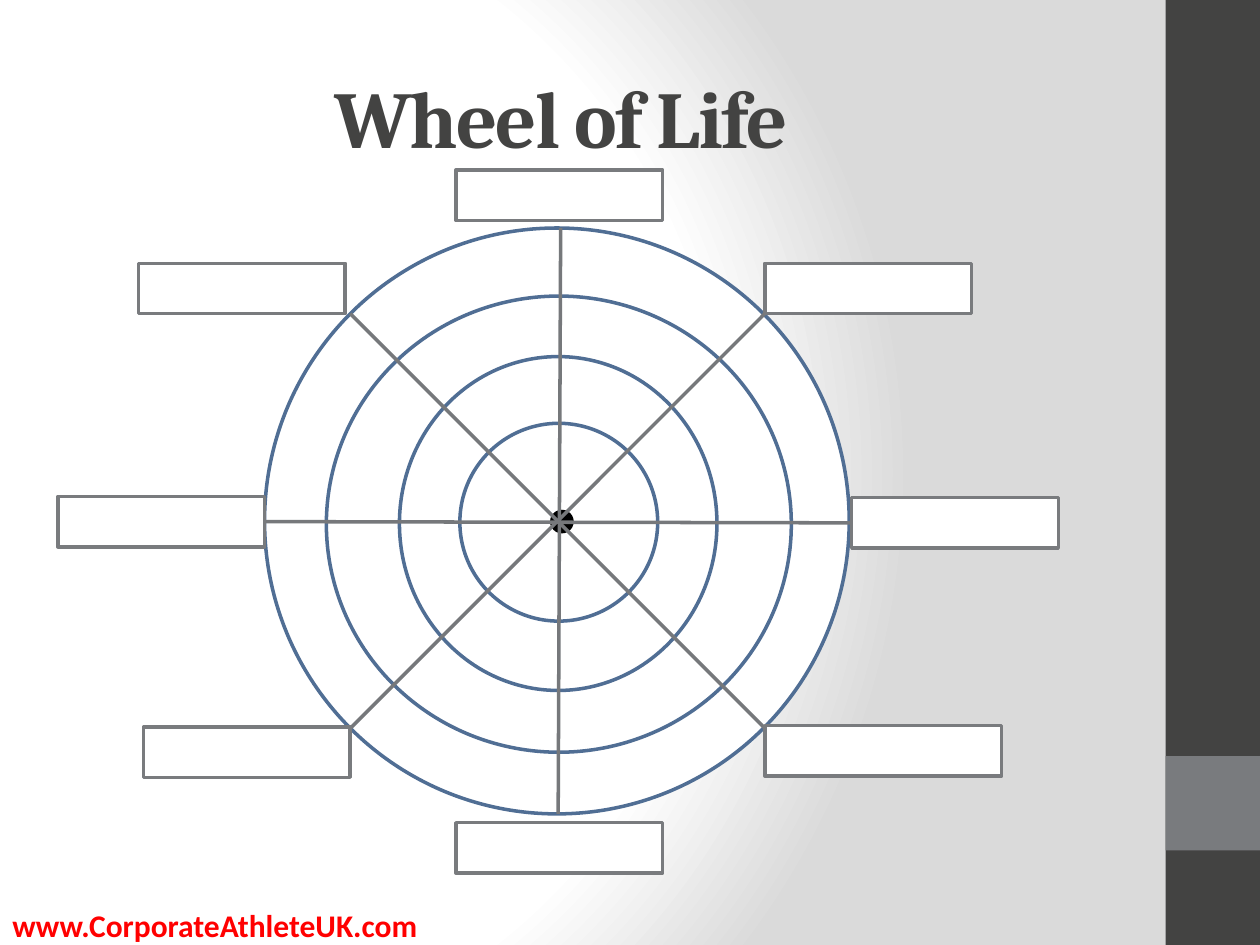
from dataclasses import dataclass

from lxml import etree
from pptx import Presentation
from pptx.dml.color import RGBColor
from pptx.enum.shapes import MSO_CONNECTOR, MSO_SHAPE
from pptx.enum.text import MSO_ANCHOR, PP_ALIGN
from pptx.oxml import parse_xml
from pptx.oxml.ns import nsdecls, qn
from pptx.util import Pt

RECTANGLE = MSO_SHAPE.RECTANGLE
OVAL = MSO_SHAPE.OVAL
STRAIGHT = MSO_CONNECTOR.STRAIGHT
LEFT, CENTER = PP_ALIGN.LEFT, PP_ALIGN.CENTER
TOP, MIDDLE = MSO_ANCHOR.TOP, MSO_ANCHOR.MIDDLE
LEFT_SIDE, RIGHT_SIDE = 1, 3


@dataclass(frozen=True)
class Theme:
    white: str = "FFFFFF"
    black: str = "000000"
    backdrop: str = "DADADA"
    dark: str = "434342"
    gray: str = "797B7E"
    spoke: str = "76787B"
    ring: str = "506E94"
    link: str = "FF0000"
    heading_font: str = "Cambria"
    body_font: str = "Calibri"
    title_size: float = 46
    link_size: float = 18
    line_width: float = 2


@dataclass(frozen=True)
class Area:
    left: float
    top: float
    width: float
    height: float


@dataclass(frozen=True)
class Spoke:
    x1: float
    y1: float
    x2: float
    y2: float


THEME = Theme()
LABEL_WIDTH, LABEL_HEIGHT = 118.08, 28.8

SIDE_BAR = Area(666, 0, 54, 540)
SIDE_ACCENT = Area(666, 432, 54, 54)

# Outermost ring first, so that the smaller ones lie on top
RINGS = [
    Area(151.2, 130.32, 334.08, 334.8),
    Area(186.48, 169.2, 265.68, 260.64),
    Area(228.24, 203.76, 181.44, 190.8),
    Area(262.8, 241.92, 113.04, 113.04),
]
HUB = Area(315.36, 292.32, 11.52, 11.52)

HORIZONTAL_SPOKE = Spoke(151.2, 297.36, 486, 297.36)
OTHER_SPOKES = [
    Spoke(320.4, 130.32, 318.96, 465.12),
    Spoke(200.16, 179.28, 437.04, 416.16),
    Spoke(437.04, 179.28, 200.16, 416.16),
]


def label_area(left: float, top: float, width: float = LABEL_WIDTH) -> Area:
    return Area(left, top, width, LABEL_HEIGHT)


LABELS = {
    "top": label_area(260.64, 97.2),
    "top right": label_area(437.04, 150.48),
    "right": label_area(486.72, 284.4),
    "bottom right": label_area(437.04, 414.72, 135.36),
    "bottom": label_area(260.64, 470.16),
    "bottom left": label_area(82.08, 415.44),
    "left": label_area(33.12, 283.68),
    "top left": label_area(79.2, 150.48),
}


def color(value: str) -> RGBColor:
    return RGBColor.from_string(value)


def bounds(area: Area) -> tuple:
    return Pt(area.left), Pt(area.top), Pt(area.width), Pt(area.height)


def paint_background(slide) -> None:
    """Circular gradient, white at its centre."""
    slide.background.fill.solid()
    solid = slide.element.find(".//" + qn("p:bgPr")).find(qn("a:solidFill"))
    stops = [(0, THEME.white), (75000, THEME.white), (100000, THEME.backdrop)]
    stop_xml = "".join(
        f'<a:gs pos="{position}"><a:srgbClr val="{value}"/></a:gs>'
        for position, value in stops
    )
    gradient = parse_xml(
        f'<a:gradFill {nsdecls("a")} rotWithShape="1"><a:gsLst>{stop_xml}</a:gsLst>'
        '<a:path path="circle">'
        '<a:fillToRect l="20000" t="50000" r="100000" b="50000"/>'
        "</a:path></a:gradFill>"
    )
    solid.getparent().replace(solid, gradient)


def add_shape(slide, kind, area: Area, fill: str, line: str | None = None):
    shape = slide.shapes.add_shape(kind, *bounds(area))
    shape.shadow.inherit = False
    shape.fill.solid()
    shape.fill.fore_color.rgb = color(fill)
    if line is None:
        shape.line.fill.background()
    else:
        shape.line.color.rgb = color(line)
        shape.line.width = Pt(THEME.line_width)
    return shape


def add_spoke(slide, spoke: Spoke):
    connector = slide.shapes.add_connector(
        STRAIGHT, Pt(spoke.x1), Pt(spoke.y1), Pt(spoke.x2), Pt(spoke.y2)
    )
    connector.line.color.rgb = color(THEME.spoke)
    connector.line.width = Pt(THEME.line_width)
    properties = connector.element.find(qn("p:spPr"))
    etree.SubElement(properties, qn("a:effectLst"))
    return connector


def add_text(slide, text: str, area: Area, *, font: str, size: float, fill: str,
             align=LEFT, anchor=TOP, spacing: float = 0) -> None:
    frame = slide.shapes.add_textbox(*bounds(area)).text_frame
    frame.word_wrap = True
    frame.vertical_anchor = anchor
    paragraph = frame.paragraphs[0]
    paragraph.alignment = align
    run = paragraph.add_run()
    run.text = text
    run.font.name = font
    run.font.size = Pt(size)
    run.font.bold = True
    run.font.color.rgb = color(fill)
    if spacing:
        run.font._element.set("spc", str(round(spacing * 100)))


def main() -> None:
    presentation = Presentation()
    presentation.slide_width, presentation.slide_height = Pt(720), Pt(540)
    slide = presentation.slides.add_slide(presentation.slide_layouts[6])

    # Backdrop, side bar and texts
    paint_background(slide)
    add_shape(slide, RECTANGLE, SIDE_BAR, THEME.dark)
    add_shape(slide, RECTANGLE, SIDE_ACCENT, THEME.gray)
    add_text(slide, "www.CorporateAthleteUK.com", Area(0, 514.08, 320.4, 28.8),
             font=THEME.body_font, size=THEME.link_size, fill=THEME.link)
    add_text(slide, "Wheel of Life", Area(20.88, 21.6, 599.76, 90),
             font=THEME.heading_font, size=THEME.title_size, fill=THEME.dark,
             align=CENTER, anchor=MIDDLE, spacing=-1)

    # Wheel
    for ring in RINGS:
        add_shape(slide, OVAL, ring, THEME.white, THEME.ring)
    add_shape(slide, OVAL, HUB, THEME.black, THEME.black)
    horizontal = add_spoke(slide, HORIZONTAL_SPOKE)
    for spoke in OTHER_SPOKES:
        add_spoke(slide, spoke)

    # Empty labels around the wheel
    labels = {
        name: add_shape(slide, RECTANGLE, area, THEME.white, THEME.gray)
        for name, area in LABELS.items()
    }
    horizontal.begin_connect(labels["left"], RIGHT_SIDE)
    horizontal.end_connect(labels["right"], LEFT_SIDE)

    presentation.save("out.pptx")


if __name__ == "__main__":
    main()
